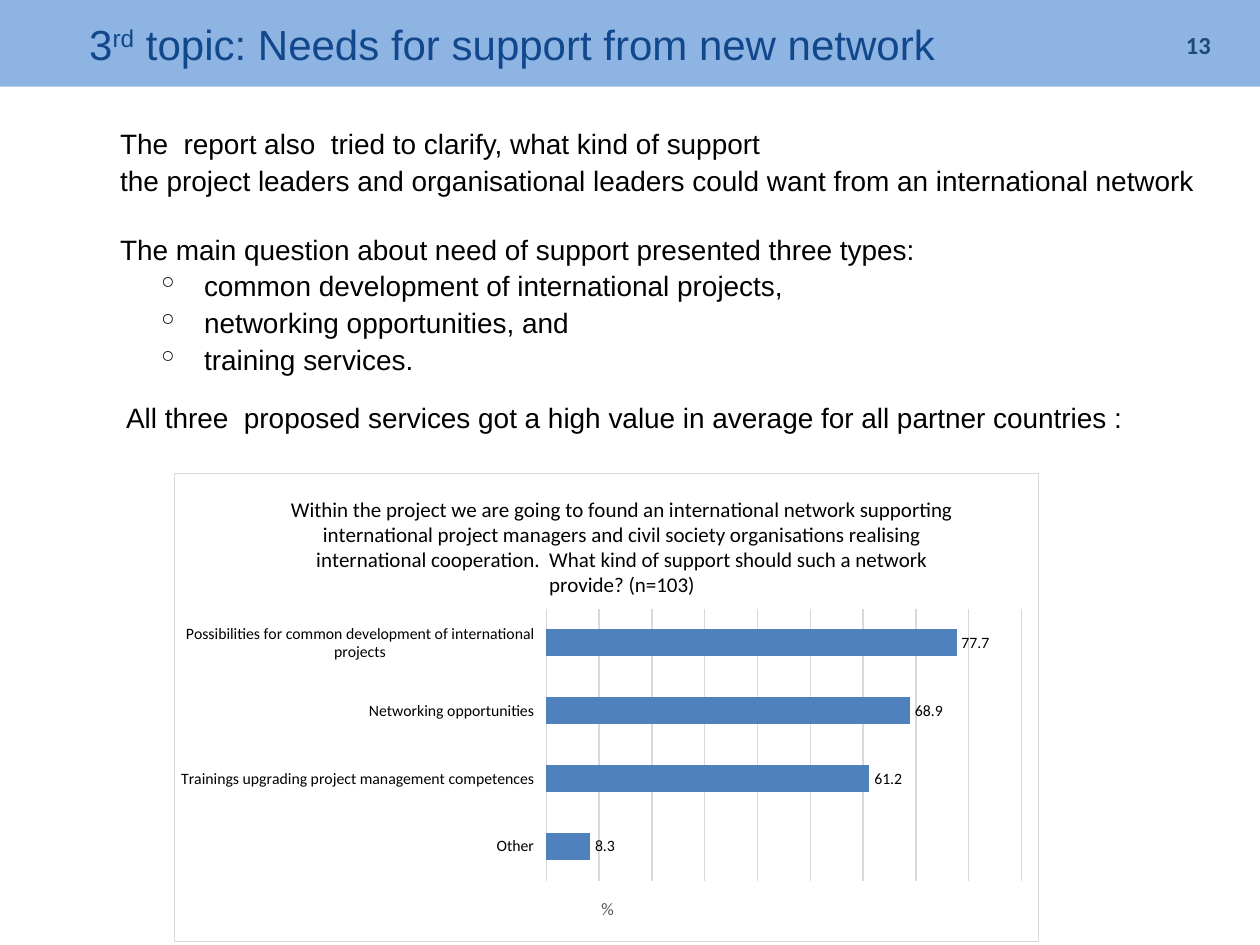
from lxml.etree import SubElement
from pptx import Presentation
from pptx.chart.data import CategoryChartData
from pptx.dml.color import RGBColor
from pptx.enum.chart import XL_CHART_TYPE, XL_LABEL_POSITION, XL_TICK_LABEL_POSITION, XL_TICK_MARK
from pptx.enum.text import MSO_ANCHOR, PP_ALIGN
from pptx.oxml import parse_xml
from pptx.oxml.ns import nsdecls, qn
from pptx.util import Pt

COLOURS = {
    "banner": "8EB4E3", "title": "11478B", "number": "1F497D", "text": "000000",
    "bar": "4F81BD", "grid": "D9D9D9", "unit": "595959", "white": "FFFFFF",
}


def colour(name):
    return RGBColor.from_string(COLOURS[name])


class SlideBuilder:
    body_font = "Arial"
    chart_font = "Calibri"

    def __init__(self, page):
        self.page = page

    def style(self, font, name, size, shade, bold=False):
        font.name, font.size, font.bold = name, Pt(size), bold
        font.color.rgb = colour(shade)

    def span(self, para, text, name, size, shade, bold=False):
        span = para.add_run()
        span.text = text
        self.style(span.font, name, size, shade, bold)
        return span

    def title(self, pieces, left, top, width, height, indent):
        box = self.page.shapes.title
        box.left, box.top, box.width, box.height = map(Pt, (left, top, width, height))
        box.fill.solid()
        box.fill.fore_color.rgb = colour("banner")
        frame = box.text_frame
        frame.vertical_anchor = MSO_ANCHOR.MIDDLE
        frame.margin_left = Pt(indent)
        para = frame.paragraphs[0]
        para.alignment = PP_ALIGN.LEFT
        for text, raised in pieces:
            span = self.span(para, text, self.body_font, 24, "title")
            if raised:
                span.font._element.set("baseline", "30000")

    def text_box(self, left, top, width, height):
        frame = self.page.shapes.add_textbox(*map(Pt, (left, top, width, height))).text_frame
        frame.word_wrap = True
        return frame

    def body(self, lines, *place):
        frame = self.text_box(*place)
        for index, (text, indent, before, bullet) in enumerate(lines):
            para = frame.add_paragraph() if index else frame.paragraphs[0]
            para.line_spacing = 1.1
            para.space_before = Pt(before)
            settings = para._p.get_or_add_pPr()
            settings.set("marL", str(Pt(indent)))
            if bullet:
                para.level = 1
                settings.set("indent", str(Pt(-27)))
                SubElement(settings, qn("a:buChar"), char="◦")
            self.span(para, text, self.body_font, 16, "text")

    def page_number(self, text, *place):
        frame = self.text_box(*place)
        frame.vertical_anchor = MSO_ANCHOR.BOTTOM
        para = frame.paragraphs[0]
        para.alignment = PP_ALIGN.RIGHT
        self.span(para, text, self.chart_font, 14, "number", bold=True)

    def layout(self, element, **position):
        """Pin a chart part to fractions of the chart's width and height."""
        for old in element.findall(qn("c:layout")):
            element.remove(old)
        target = '<c:layoutTarget val="inner"/>' if "w" in position else ""
        modes = "".join(f'<c:{axis}Mode val="edge"/>' for axis in "xy")
        values = "".join(f'<c:{key} val="{value}"/>' for key, value in position.items())
        layout = parse_xml(
            f'<c:layout {nsdecls("c")}><c:manualLayout>{target}{modes}{values}'
            "</c:manualLayout></c:layout>")
        text = element.find(qn("c:tx"))
        if text is None:
            element.insert(0, layout)
        else:
            text.addnext(layout)

    def chart_caption(self, caption, text, size, shade, **position):
        self.span(caption.text_frame.paragraphs[0], text, self.chart_font, size, shade)
        self.layout(caption._element, **position)

    def bar_chart(self, heading, unit, values, *place):
        data = CategoryChartData(number_format="###0.0")
        data.categories = list(values)
        data.add_series("Series 1", list(values.values()))
        chart = self.page.shapes.add_chart(
            XL_CHART_TYPE.BAR_CLUSTERED, *map(Pt, place), data).chart
        chart.has_legend = False
        self.style(chart.font, self.chart_font, 10, "text")

        # Frame and heading
        chart_space = chart._chartSpace
        chart_space.find(qn("c:chart")).addnext(parse_xml(
            f'<c:spPr {nsdecls("c", "a")}>'
            f'<a:solidFill><a:srgbClr val="{COLOURS["white"]}"/></a:solidFill>'
            f'<a:ln w="{Pt(0.75)}"><a:solidFill><a:srgbClr val="{COLOURS["grid"]}"/>'
            "</a:solidFill></a:ln></c:spPr>"))
        chart.has_title = True
        self.chart_caption(chart.chart_title, heading, 12, "text", x=0.13, y=0.04)
        self.layout(chart_space.find(qn("c:chart")).find(qn("c:plotArea")),
                    x=0.43, y=0.29, w=0.55, h=0.58)

        # Axes
        category = chart.category_axis
        category.major_tick_mark = XL_TICK_MARK.NONE
        category.tick_label_position = XL_TICK_LABEL_POSITION.LOW
        category.format.line.fill.background()
        self.style(category.tick_labels.font, self.chart_font, 9, "text")
        scale = chart.value_axis
        scale.minimum_scale, scale.maximum_scale, scale.major_unit = 0, 90, 10
        scale.has_major_gridlines = True
        grid = scale.major_gridlines.format.line
        grid.color.rgb = colour("grid")
        grid.width = Pt(0.75)
        scale.has_title = True
        self.chart_caption(scale.axis_title, unit, 10, "unit", x=0.49, y=0.9)
        scale.visible = False

        # Bars and labels
        plot = chart.plots[0]
        plot.gap_width = 150
        plot.vary_by_categories = False
        bars = plot.series[0]
        bars.format.fill.solid()
        bars.format.fill.fore_color.rgb = colour("bar")
        labels = bars.data_labels
        labels.show_value = True
        labels.number_format = "###0.0"
        labels.number_format_is_linked = False
        labels.position = XL_LABEL_POSITION.OUTSIDE_END
        self.style(labels.font, self.chart_font, 9, "text")


def main():
    deck = Presentation()
    deck.slide_width, deck.slide_height = Pt(720), Pt(540)
    builder = SlideBuilder(deck.slides.add_slide(deck.slide_layouts[5]))

    # Banner
    builder.title([("3", False), ("rd", True),
                   (" topic: Needs for support from new network", False)],
                  0, 0, 720, 49.5, indent=51)
    builder.page_number("13", 654.5, 15, 44.5, 22.5)

    # Text: wording, left indent, space before, bullet
    builder.body([
        ("The  report also  tried to clarify, what kind of support", 3, 0, False),
        ("the project leaders and organisational leaders could want from an "
         "international network", 3, 0, False),
        ("The main question about need of support presented three types:", 3, 18, False),
        ("common development of international projects,", 51, 0, True),
        ("networking opportunities, and", 51, 0, True),
        ("training services.", 51, 0, True),
        ("All three  proposed services got a high value in average for all "
         "partner countries :", 6.5, 12, False),
    ], 58.5, 67, 641, 442)

    # Chart
    builder.bar_chart(
        "Within the project we are going to found an international network supporting "
        "international project managers and civil society organisations realising "
        "international cooperation.  What kind of support should such a network "
        "provide? (n=103)",
        "%",
        {"Other": 8.3,
         "Trainings upgrading project management competences": 61.2,
         "Networking opportunities": 68.9,
         "Possibilities for common development of international projects": 77.7},
        99.5, 270, 494.5, 268.5)

    deck.save("out.pptx")


if __name__ == "__main__":
    main()
